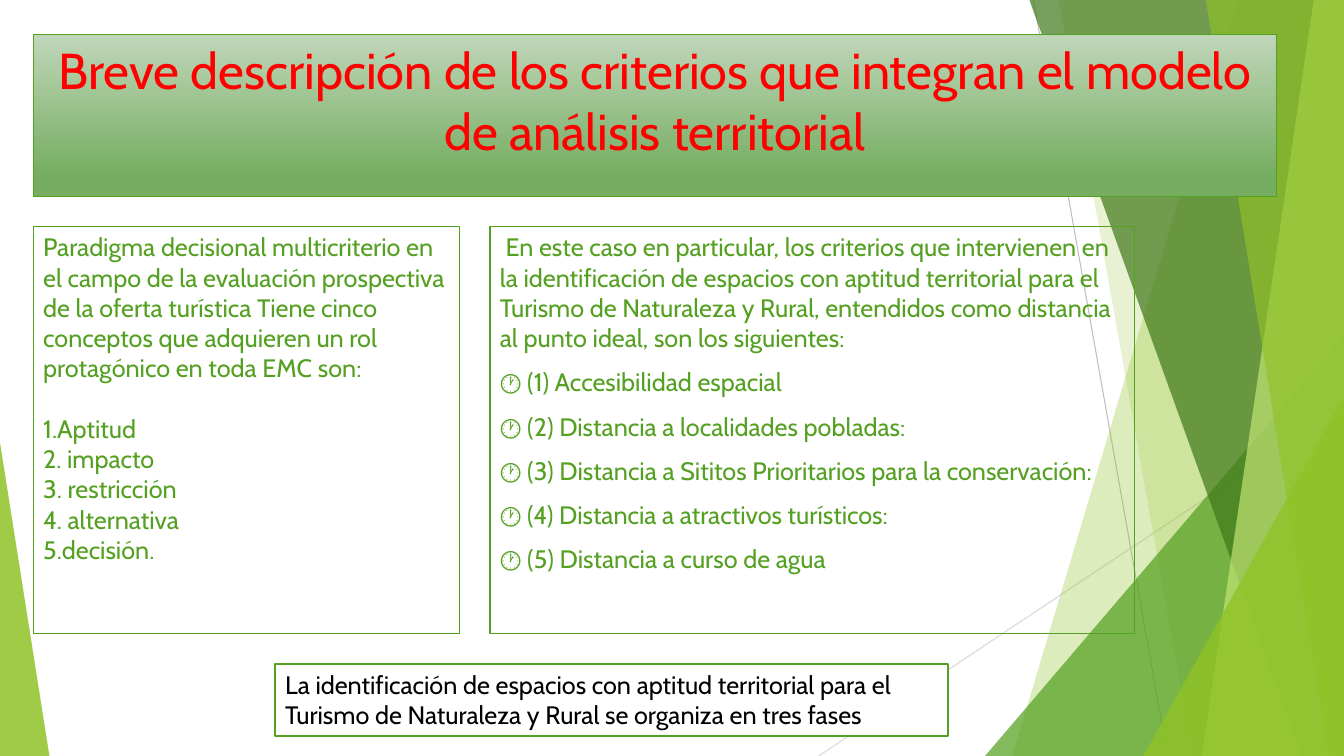
from dataclasses import dataclass

from pptx import Presentation
from pptx.dml.color import RGBColor
from pptx.enum.shapes import MSO_CONNECTOR, MSO_SHAPE
from pptx.enum.text import MSO_ANCHOR, MSO_AUTO_SIZE, PP_ALIGN
from pptx.oxml.ns import qn
from pptx.util import Inches, Pt
from lxml import etree

LINE = MSO_CONNECTOR.STRAIGHT
TRIANGLE = MSO_SHAPE.ISOSCELES_TRIANGLE
TOP = MSO_ANCHOR.TOP
NO_AUTOFIT = MSO_AUTO_SIZE.NONE
LEFT, CENTER = PP_ALIGN.LEFT, PP_ALIGN.CENTER
WIDTH, HEIGHT = 13.33, 7.5


@dataclass(frozen=True)
class Theme:
    font: str = "Cabin"
    title_size: float = 36
    body_size: float = 18
    line_height: float = 21.6
    green: str = "54A021"
    dark_green: str = "3F7819"
    lime: str = "90C226"
    pale_lime: str = "C0E474"
    title_top: str = "C0D6B9"
    title_bottom: str = "76AD61"
    red: str = "FF0000"
    black: str = "000000"
    white: str = "FFFFFF"
    gray: str = "BFBFBF"
    light_gray: str = "D9D9D9"


THEME = Theme()

CONCEPTS_INTRO = (
    "Paradigma decisional multicriterio en el campo de la evaluación prospectiva "
    "de la oferta turística Tiene cinco conceptos que adquieren un rol "
    "protagónico en toda EMC son:")
CONCEPTS = ["Aptitud", " impacto", " restricción", " alternativa", "decisión."]
CRITERIA_INTRO = (
    " En este caso en particular, los criterios que intervienen en la "
    "identificación de espacios con aptitud territorial para el Turismo de "
    "Naturaleza y Rural, entendidos como distancia al punto ideal, son los "
    "siguientes:")
CRITERIA = [
    "Accesibilidad espacial",
    "Distancia a localidades pobladas:",
    "Distancia a Sititos Prioritarios para la conservación:",
    "Distancia a atractivos turísticos:",
    "Distancia a curso de agua",
]


def rgb(color):
    return RGBColor.from_string(color)


def place(shape, left, top, width, height):
    shape.left, shape.top = Inches(left), Inches(top)
    shape.width, shape.height = Inches(width), Inches(height)


def outline(shape, width):
    shape.line.color.rgb = rgb(THEME.green)
    shape.line.width = Pt(width)


def glass(shape, color, opacity):
    """Fill with a see-through colour, without line or shadow."""
    shape.shadow.inherit = False
    shape.line.fill.background()
    shape.fill.solid()
    shape.fill.fore_color.rgb = rgb(color)
    clr = shape.fill._xPr.find(qn("a:solidFill"))[0]
    etree.SubElement(clr, qn("a:alpha"), val=str(opacity * 1000))


def add_thin_line(s, start, end, color):
    line = s.shapes.add_connector(LINE, *map(Inches, start + end))
    line.line.color.rgb = rgb(color)
    line.line.width = Pt(0.75)
    etree.SubElement(line._element.spPr, qn("a:effectLst"))


def add_band(s, top_x, bottom_x, color, opacity):
    """Full-height band from a slanted left edge to the right slide edge."""
    points = [(WIDTH, 0), (WIDTH, HEIGHT), (bottom_x, HEIGHT)]
    builder = s.shapes.build_freeform(Inches(top_x), 0)
    builder.add_line_segments([(Inches(x), Inches(y)) for x, y in points])
    glass(builder.convert_to_shape(), color, opacity)


def add_triangle(s, left, top, width, apex, color, opacity):
    """Triangle standing on the bottom edge of the slide."""
    sp = s.shapes.add_shape(TRIANGLE, Inches(left), Inches(top),
                            Inches(width), Inches(HEIGHT - top))
    sp.adjustments[0] = apex
    glass(sp, color, opacity)


def add_text(tf, text, size=THEME.body_size, color=THEME.green, align=LEFT,
             before=0, numbered=False):
    """Write text in the empty first paragraph, or in a new one."""
    p = tf.paragraphs[0] if not tf.text else tf.add_paragraph()
    p.alignment = align
    p.space_before = Pt(before)
    if numbered:
        pPr = p._p.get_or_add_pPr()
        pPr.set("marL", "0")
        pPr.set("indent", "0")
        etree.SubElement(pPr, qn("a:buAutoNum"), type="arabicPeriod")
    r = p.add_run()
    r.text = text
    r.font.name, r.font.size = THEME.font, Pt(size)
    r.font.color.rgb = rgb(color)


def add_box(s, left, top, width, height, line_width=0.75):
    box = s.shapes.add_textbox(0, 0, 0, 0)
    place(box, left, top, width, height)
    outline(box, line_width)
    box.text_frame.word_wrap = True
    return box


def add_backdrop(s):
    t = THEME
    add_thin_line(s, (10.25, 0), (11.58, HEIGHT), t.gray)
    add_thin_line(s, (WIDTH, 4.03), (8.12, HEIGHT), t.light_gray)
    add_band(s, 12.28, 10.04, t.lime, 30)
    add_band(s, 10.5, 11.83, t.lime, 20)
    add_triangle(s, 9.77, 3.33, 3.56, 1, t.green, 72)
    add_band(s, 10.21, 12.91, t.dark_green, 70)
    add_band(s, 13.03, 11.92, t.pale_lime, 70)
    add_band(s, 11.96, 13.18, t.lime, 65)
    add_triangle(s, 11.34, 3.93, 1.99, 1, t.lime, 80)
    add_triangle(s, 0, 4.39, 0.49, 0, t.lime, 85)


def add_title(s, text):
    title = s.shapes.title
    s.shapes._spTree.append(title._element)  # in front of the backdrop
    place(title, 0.33, 0.34, 12.33, 1.61)
    outline(title, 1)
    title.fill.gradient()
    title.fill.gradient_angle = 270
    stops = [(0, THEME.title_top), (0.88, THEME.title_bottom)]
    for stop, (position, color) in zip(title.fill.gradient_stops, stops):
        stop.position = position
        stop.color.rgb = rgb(color)
    tf = title.text_frame
    tf.word_wrap, tf.auto_size, tf.vertical_anchor = True, NO_AUTOFIT, TOP
    add_text(tf, text, size=THEME.title_size, color=THEME.red, align=CENTER)


def add_concepts(s):
    tf = add_box(s, 0.33, 2.25, 4.23, 4.04).text_frame
    add_text(tf, CONCEPTS_INTRO)
    for i, concept in enumerate(CONCEPTS):
        add_text(tf, concept, numbered=True,
                 before=0 if i else THEME.line_height)


def add_criteria(s):
    tf = add_box(s, 4.86, 2.25, 6.39, 4.04).text_frame
    add_text(tf, CRITERIA_INTRO)
    for i, criterion in enumerate(CRITERIA, 1):
        add_text(tf, f"🕐 ({i}) {criterion}", before=10)


def add_conclusion(s, text):
    box = add_box(s, 2.73, 6.59, 6.67, 0.71, line_width=1.5)
    box.fill.solid()
    box.fill.fore_color.rgb = rgb(THEME.white)
    add_text(box.text_frame, text, color=THEME.black)


def main():
    prs = Presentation()
    prs.slide_width, prs.slide_height = Inches(WIDTH), Inches(HEIGHT)
    s = prs.slides.add_slide(prs.slide_layouts.get_by_name("Title Only"))
    add_backdrop(s)
    add_title(s, "Breve descripción de los criterios que integran el modelo "
                 "de análisis territorial")
    add_concepts(s)
    add_criteria(s)
    add_conclusion(s, "La identificación de espacios con aptitud territorial para "
                      "el Turismo de Naturaleza y Rural se organiza en tres fases")
    prs.save("out.pptx")


if __name__ == "__main__":
    main()
